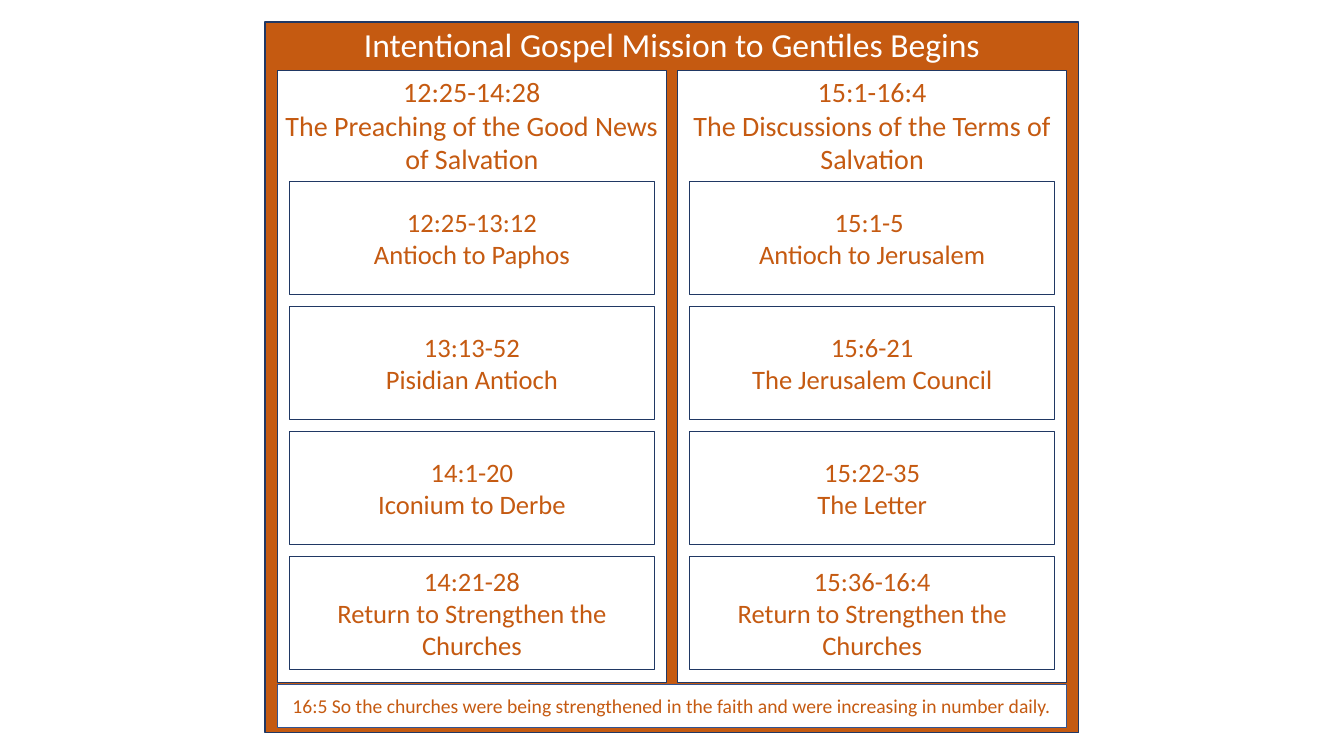
"""Build a slide outlining the start of the mission to the Gentiles in two columns."""
from pptx import Presentation
from pptx.dml.color import RGBColor
from pptx.enum.shapes import MSO_SHAPE
from pptx.enum.text import MSO_ANCHOR, PP_ALIGN
from pptx.util import Inches, Pt

TITLE = "Intentional Gospel Mission to Gentiles Begins"
SECTIONS = [
    (("12:25-14:28", "The Preaching of the Good News of Salvation"), [
        ("12:25-13:12", "Antioch to Paphos"),
        ("13:13-52", "Pisidian Antioch"),
        ("14:1-20", "Iconium to Derbe"),
        ("14:21-28", "Return to Strengthen the Churches"),
    ]),
    (("15:1-16:4", "The Discussions of the Terms of Salvation"), [
        ("15:1-5 ", "Antioch to Jerusalem"),
        ("15:6-21", "The Jerusalem Council"),
        ("15:22-35", "The Letter"),
        ("15:36-16:4", "Return to Strengthen the Churches"),
    ]),
]
SUMMARY = ("16:5 So the churches were being strengthened in the faith "
           "and were increasing in number daily.")

COLORS = {"orange": "C55A11", "white": "FFFFFF", "navy": "203864", "blue": "325491"}
FONT = "Calibri"
FRAME = (2.63, 0.22, 8.07, 7.05)
COLUMN_LEFT, COLUMN_TOP, COLUMN_WIDTH, COLUMN_HEIGHT = 2.75, 0.7, 3.86, 6.07
COLUMN_PITCH = 3.97
CARD_INDENT, CARD_TOP, CARD_WIDTH, CARD_HEIGHT = 0.12, 1.8, 3.62, 1.12
CARD_PITCH = 1.24
SUMMARY_BOX = (COLUMN_LEFT, 6.79, 7.83, 0.43)


def color(name):
    return RGBColor.from_string(COLORS[name])


def add_box(slide, box, lines, size, insets, anchor=MSO_ANCHOR.MIDDLE,
            fill="white", ink="orange", outline="navy"):
    shape = slide.shapes.add_shape(MSO_SHAPE.RECTANGLE, *map(Inches, box))
    shape.shadow.inherit = False
    shape.fill.solid()
    shape.fill.fore_color.rgb = color(fill)
    shape.line.color.rgb = color(outline)
    shape.line.width = Pt(1)
    frame = shape.text_frame
    frame.word_wrap = True
    frame.vertical_anchor = anchor
    (frame.margin_left, frame.margin_top,
     frame.margin_right, frame.margin_bottom) = map(Inches, insets)
    frame.text = "\n".join(lines)
    for paragraph in frame.paragraphs:
        paragraph.alignment = PP_ALIGN.CENTER
        for run in paragraph.runs:
            run.font.name = FONT
            run.font.size = Pt(size)
            run.font.color.rgb = color(ink)


def main():
    presentation = Presentation()
    presentation.slide_width = Inches(13.33)
    presentation.slide_height = Inches(7.5)
    slide = presentation.slides.add_slide(presentation.slide_layouts[6])

    add_box(slide, FRAME, [TITLE], 24, (0.1, 0.02, 0.1, 0.05),
            MSO_ANCHOR.TOP, fill="orange", ink="white")
    for column, (heading, cards) in enumerate(SECTIONS):
        left = COLUMN_LEFT + column * COLUMN_PITCH
        add_box(slide, (left, COLUMN_TOP, COLUMN_WIDTH, COLUMN_HEIGHT),
                heading, 20, (0, 0.04, 0, 0), MSO_ANCHOR.TOP)
        for row, card in enumerate(cards):
            top = CARD_TOP + row * CARD_PITCH
            add_box(slide, (left + CARD_INDENT, top, CARD_WIDTH, CARD_HEIGHT),
                    card, 19, (0.02, 0.02, 0.02, 0.02))
    add_box(slide, SUMMARY_BOX, [SUMMARY], 14, (0.1, 0.05, 0.1, 0.05), outline="blue")

    presentation.save("out.pptx")


if __name__ == "__main__":
    main()
